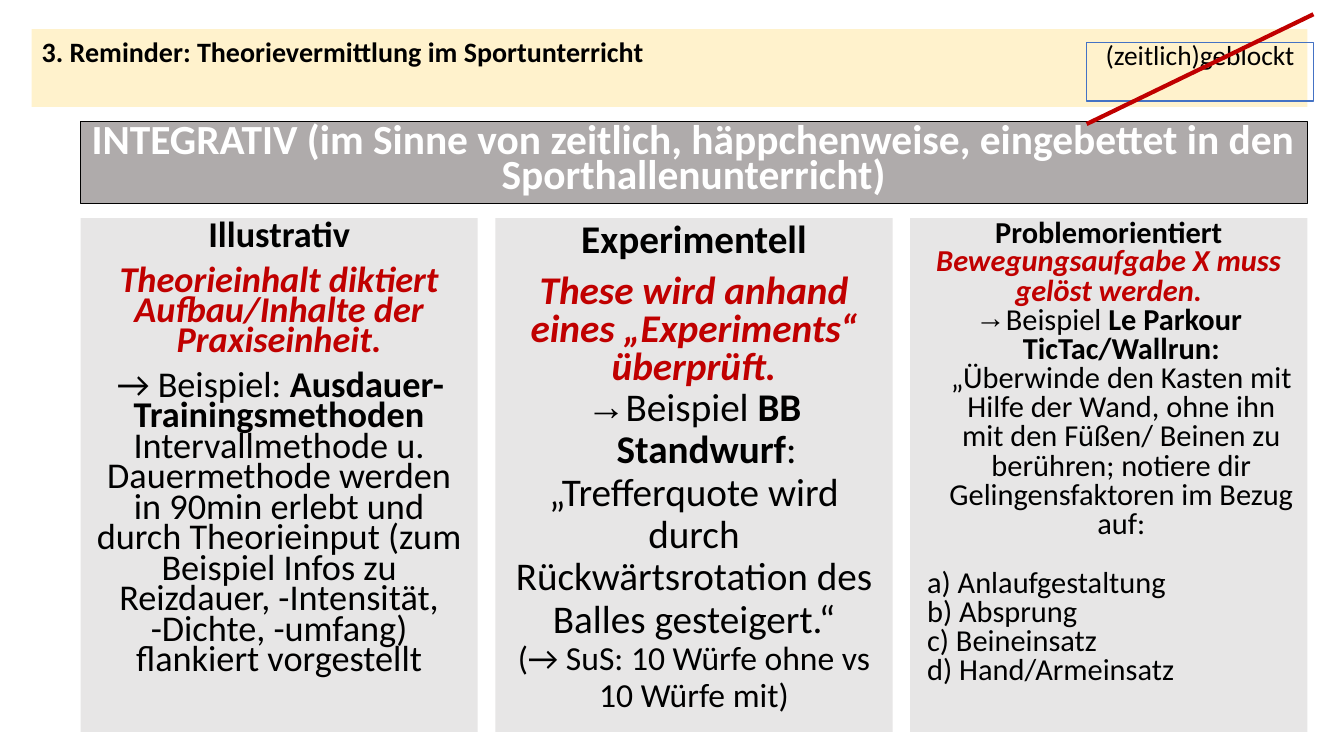
from lxml.etree import SubElement
from pptx import Presentation
from pptx.dml.color import RGBColor
from pptx.enum.shapes import MSO_CONNECTOR, MSO_SHAPE
from pptx.enum.text import MSO_ANCHOR, MSO_AUTO_SIZE, PP_ALIGN
from pptx.oxml.ns import qn
from pptx.util import Pt

BLACK, RED, WHITE = "000000", "C00000", "FFFFFF"
PLAIN = dict(bold=False, color=BLACK)
BOLD = dict(bold=True, color=BLACK)
CLAIM = dict(bold=True, italic=True, color=RED)
LIGHT = dict(bold=True, color=WHITE)

HEADER = [dict(runs=[("3. Reminder: Theorievermittlung im Sportunterricht", BOLD)],
               align=PP_ALIGN.LEFT, spacing=1)]
BLOCKED = [dict(runs=[("(zeitlich)geblockt", PLAIN)], spacing=0.7)]
BANNER = [dict(runs=[("INTEGRATIV (im Sinne von zeitlich, häppchenweise, eingebettet in den "
                      "Sporthallenunterricht)", LIGHT)], spacing=0.7)]

ILLUSTRATIVE = [
    dict(runs=[("Illustrativ", BOLD)], spacing=0.7),
    dict(runs=[("Theorieinhalt diktiert Aufbau/Inhalte der Praxiseinheit.", CLAIM)],
         spacing=0.7, before=10),
    dict(runs=[("→ Beispiel: ", PLAIN), ("Ausdauer-Trainingsmethoden", BOLD),
               (" Intervallmethode u. Dauermethode werden in 90min erlebt und durch "
                "Theorieinput (zum Beispiel Infos zu Reizdauer, -Intensität, -Dichte, "
                "-umfang) flankiert vorgestellt", PLAIN)],
         spacing=0.7, before=10),
]
EXPERIMENTAL = [
    dict(runs=[("Experimentell", BOLD)], spacing=0.8),
    dict(runs=[("These wird anhand eines „Experiments“ überprüft.", CLAIM)],
         spacing=0.8, before=10),
    dict(runs=[("Beispiel ", PLAIN), ("BB Standwurf", BOLD), (":", PLAIN)],
         spacing=0.9, bullet="→"),
    dict(runs=[("„Trefferquote wird durch Rückwärtsrotation des Balles gesteigert.“", PLAIN)],
         spacing=0.9),
    dict(runs=[("(→ SuS: 10 Würfe ohne vs 10 Würfe mit)", PLAIN)], spacing=0.9, size=24),
]
FACTORS = ["a) Anlaufgestaltung", "b) Absprung", "c) Beineinsatz", "d) Hand/Armeinsatz"]
PROBLEM = [
    dict(runs=[("Problemorientiert", BOLD)], spacing=0.7),
    dict(runs=[("Bewegungsaufgabe X muss gelöst werden.", CLAIM)], spacing=0.8),
    dict(runs=[("Beispiel ", PLAIN), ("Le Parkour TicTac/Wallrun: ", BOLD),
               ("„Überwinde den Kasten mit Hilfe der Wand, ohne ihn mit den Füßen/ Beinen zu "
                "berühren; notiere dir Gelingensfaktoren im Bezug auf:", PLAIN)],
         spacing=0.8, bullet="→"),
] + [dict(runs=[(factor, PLAIN)], spacing=0.8, align=PP_ALIGN.LEFT, indent=5,
          before=0 if i else 21) for i, factor in enumerate(FACTORS)]
COLUMNS = [(ILLUSTRATIVE, 25.9), (EXPERIMENTAL, 28), (PROBLEM, 21.7)]

LEFT, RIGHT = 57.6, 933.8
COL_TOP, COL_H, GAP = 155.8, 367, 12.6
COL_W = (RIGHT - LEFT - GAP * (len(COLUMNS) - 1)) / len(COLUMNS)


def rgb(color):
    return RGBColor.from_string(color)


def add_paragraph(p, size, runs, spacing, align=PP_ALIGN.CENTER, before=0, indent=0, bullet=None):
    p.alignment = align
    p.line_spacing = spacing
    p.space_before = Pt(before)
    p.space_after = Pt(0)
    pPr = p._p.get_or_add_pPr()
    pPr.set("marL", str(Pt(18 if bullet else indent)))
    pPr.set("indent", str(Pt(-18 if bullet else 0)))
    if bullet:
        SubElement(pPr, qn("a:buFont")).set("typeface", "Arial")
        SubElement(pPr, qn("a:buChar")).set("char", bullet)
    else:
        SubElement(pPr, qn("a:buNone"))
    for text, style in runs:
        r = p.add_run()
        r.text = text
        r.font.name = "Calibri"
        r.font.size = Pt(size)
        r.font.bold = style["bold"]
        r.font.italic = style.get("italic", False)
        r.font.color.rgb = rgb(style["color"])


def fill_box(sp, box, paragraphs, size, fill=None, line=None):
    sp.left, sp.top, sp.width, sp.height = [Pt(v) for v in box]
    if fill:
        sp.fill.solid()
        sp.fill.fore_color.rgb = rgb(fill)
    else:
        sp.fill.background()
    if line:
        sp.line.color.rgb = rgb(line)
        sp.line.width = Pt(0.75)
    else:
        sp.line.fill.background()
    tf = sp.text_frame
    tf.word_wrap = True
    tf.auto_size = MSO_AUTO_SIZE.NONE
    tf.vertical_anchor = MSO_ANCHOR.TOP
    for i, item in enumerate(paragraphs):
        p = tf.add_paragraph() if i else tf.paragraphs[0]
        add_paragraph(p, **{"size": size, **item})


def add_box(shapes):
    sp = shapes.add_shape(MSO_SHAPE.RECTANGLE, 0, 0, 0, 0)
    sp.shadow.inherit = False
    return sp


def main():
    prs = Presentation()
    prs.slide_width, prs.slide_height = Pt(960), Pt(540)
    s = prs.slides.add_slide(prs.slide_layouts[1])
    shapes = s.shapes

    fill_box(shapes.title, (22.6, 20.8, 911.2, 55.6), HEADER, 20, "FFF2CC")
    for i, (paragraphs, size) in enumerate(COLUMNS):
        sp = add_box(shapes) if i else s.placeholders[1]
        box = (LEFT + i * (COL_W + GAP), COL_TOP, COL_W, COL_H)
        fill_box(sp, box, paragraphs, size, "E7E6E6")
    fill_box(add_box(shapes), (776.2, 30.2, 162, 42), BLOCKED, 19.6, line="4472C4")
    fill_box(add_box(shapes), (LEFT, 87, RIGHT - LEFT, 58.5), BANNER, 29.6, "AFABAB", BLACK)

    strike = shapes.add_connector(MSO_CONNECTOR.STRAIGHT, Pt(776.2), Pt(88.6), Pt(938.2), Pt(10.2))
    strike.line.color.rgb = rgb(RED)
    strike.line.width = Pt(3)
    SubElement(strike._element.spPr, qn("a:effectLst"))

    prs.save("out.pptx")


if __name__ == "__main__":
    main()
